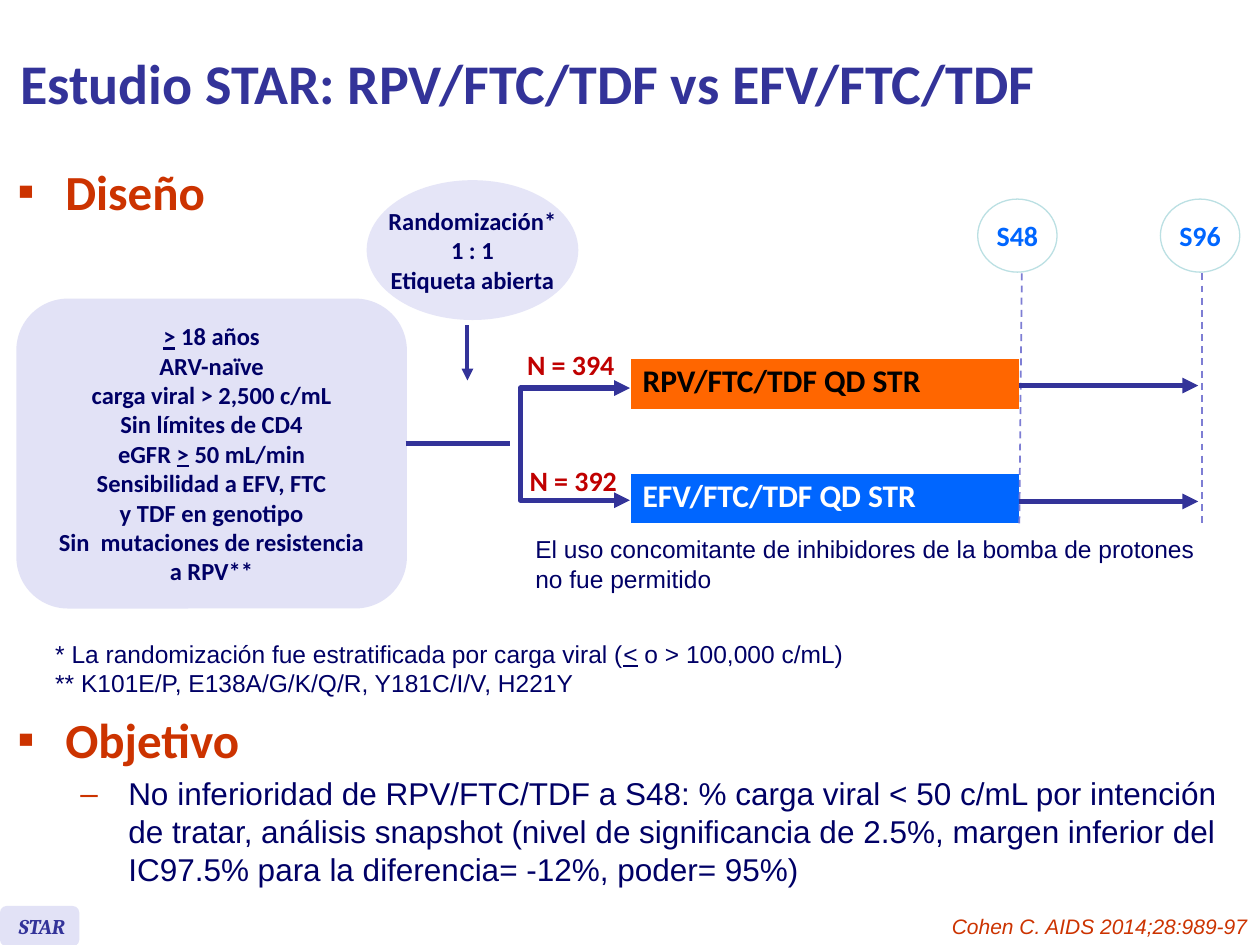
from lxml import etree
from pptx import Presentation
from pptx.dml.color import RGBColor
from pptx.enum import dml, shapes, text
from pptx.oxml.ns import qn
from pptx.util import Inches, Pt

NAVY = RGBColor(0x00, 0x00, 0x66)
INDIGO = RGBColor(0x33, 0x33, 0x99)
RUST = RGBColor(0xCC, 0x33, 0x00)
RED = RGBColor(0xC0, 0x00, 0x00)
ORANGE = RGBColor(0xFF, 0x66, 0x00)
BLUE = RGBColor(0x00, 0x66, 0xFF)
LILAC = RGBColor(0xE2, 0xE2, 0xF6)
PALE_LILAC = RGBColor(0xE5, 0xE5, 0xF7)
VIOLET = RGBColor(0x7E, 0x7E, 0xD4)
AQUA = RGBColor(0xBB, 0xE0, 0xE3)
BLACK = RGBColor(0, 0, 0)
WHITE = RGBColor(0xFF, 0xFF, 0xFF)

LEFT, CENTER, RIGHT = text.PP_ALIGN.LEFT, text.PP_ALIGN.CENTER, text.PP_ALIGN.RIGHT
MIDDLE = text.MSO_ANCHOR.MIDDLE
OVAL, ROUNDED = shapes.MSO_SHAPE.OVAL, shapes.MSO_SHAPE.ROUNDED_RECTANGLE

prs = Presentation()
prs.slide_width, prs.slide_height = Inches(10), Inches(7.5)
s = prs.slides.add_slide(prs.slide_layouts[5])


def write(tf, lines, size, font, color, bold=False, italic=False, align=LEFT, wrap=True):
    """Fill a text frame, one paragraph a line; text between underscores is underlined."""
    tf.word_wrap = wrap
    for i, line in enumerate(lines):
        p = tf.paragraphs[0] if i == 0 else tf.add_paragraph()
        p.alignment = align
        for j, part in enumerate(line.split("_")):
            if not part:
                continue
            r = p.add_run()
            r.text = part
            r.font.size, r.font.name = Pt(size), font
            r.font.bold, r.font.italic = bold, italic
            r.font.color.rgb = color
            if j % 2:
                r.font.underline = True


def style_line(sp, color, width, ends=()):
    """Set the stroke of a connector or outline, with triangles at the given ends."""
    sp.line.color.rgb = color
    sp.line.width = Pt(width)
    for end in ends:
        etree.SubElement(sp.line._get_or_add_ln(), qn("a:" + end), type="triangle")
    if sp._element.spPr.find(qn("a:effectLst")) is None:
        etree.SubElement(sp._element.spPr, qn("a:effectLst"))


# Title
title = s.shapes.title
title.left, title.top, title.width, title.height = map(Inches, (0.06, 0.05, 9.55, 1.21))
title.text_frame.vertical_anchor = MIDDLE
write(title.text_frame, ["Estudio STAR: RPV/FTC/TDF vs EFV/FTC/TDF"], 32, "Calibri", INDIGO, bold=True)
title.text_frame.auto_size = text.MSO_AUTO_SIZE.NONE

# Section headings and objective
goal = ("No inferioridad de RPV/FTC/TDF a S48: % carga viral < 50 c/mL por intención de tratar, "
        "análisis snapshot (nivel de significancia de 2.5%, margen inferior del IC97.5% para la "
        "diferencia= -12%, poder= 95%)")
for box, heading, detail in [
    ((0.04, 1.23, 1.98, 0.63), "Diseño", None),
    ((0.04, 5.58, 9.8, 1.58), "Objetivo", goal),
]:
    tf = s.shapes.add_textbox(*map(Inches, box)).text_frame
    write(tf, [heading], 28, "Calibri", RUST, bold=True)
    if detail:
        p = tf.add_paragraph()
        p.level = 1
        p.space_before = Pt(3.6)
        r = p.add_run()
        r.text = detail
        r.font.size, r.font.name = Pt(18), "Arial"
        r.font.color.rgb = NAVY
    for p, bullet, margin in zip(tf.paragraphs, "▪–", (0.38, 0.88)):
        pPr = p._p.get_or_add_pPr()
        pPr.set("marL", str(Inches(margin)))
        pPr.set("indent", str(Inches(-0.38)))
        bullet_color = etree.SubElement(pPr, qn("a:buClr"))
        etree.SubElement(bullet_color, qn("a:srgbClr"), val=str(RUST))
        etree.SubElement(pPr, qn("a:buFont"), typeface="Arial")
        etree.SubElement(pPr, qn("a:buChar"), char=bullet)

# Treatment arms
for top, height, arm, fill, color, spacing in [
    (2.84, 0.41, "RPV/FTC/TDF QD STR", ORANGE, BLACK, 0.8),
    (3.76, 0.4, "EFV/FTC/TDF QD STR", BLUE, WHITE, 0.7),
]:
    table = s.shapes.add_table(1, 1, Inches(5), Inches(top), Inches(3.09), Inches(height)).table
    table.first_row = table.horz_banding = False
    cell = table.cell(0, 0)
    cell.fill.solid()
    cell.fill.fore_color.rgb = fill
    cell.vertical_anchor = MIDDLE
    write(cell.text_frame, [arm], 18, "Calibri", color, bold=True)
    cell.text_frame.paragraphs[0].line_spacing = spacing

# Randomisation, inclusion criteria, visits and study tag
criteria = ["_>_ 18 años", "ARV-naïve", "carga viral > 2,500 c/mL", "Sin límites de CD4",
            "eGFR _>_ 50 mL/min", "Sensibilidad a EFV, FTC", "y TDF en genotipo",
            "Sin  mutaciones de resistencia", "a RPV**"]
randomisation = ["Randomización*", "1 : 1", "Etiqueta abierta"]
for kind, box, fill, outline, lines, size, color, wrap in [
    (OVAL, (2.91, 1.43, 1.68, 1.11), PALE_LILAC, None, randomisation, 14, NAVY, False),
    (ROUNDED, (0.13, 2.37, 3.1, 2.46), LILAC, None, criteria, 14, NAVY, True),
    (OVAL, (7.76, 1.58, 0.63, 0.58), WHITE, AQUA, ["S48"], 16, BLUE, False),
    (OVAL, (9.21, 1.58, 0.63, 0.58), WHITE, AQUA, ["S96"], 16, BLUE, False),
    (ROUNDED, (0, 7.19, 0.63, 0.32), LILAC, None, [], 12, INDIGO, True),
]:
    sp = s.shapes.add_shape(kind, *map(Inches, box))
    sp.shadow.inherit = False
    sp.fill.solid()
    sp.fill.fore_color.rgb = fill
    if outline:
        style_line(sp, outline, 0.75)
    else:
        sp.line.fill.background()
    sp.text_frame.vertical_anchor = MIDDLE
    write(sp.text_frame, lines, size, "Calibri", color, bold=True, align=CENTER, wrap=wrap)

# Straight lines, arrows and visit markers
for x1, y1, x2, y2, color, width, ends, dashed in [
    (3.71, 2.58, 3.71, 3.02, INDIGO, 2.25, ["tailEnd"], False),
    (3.22, 3.52, 4.05, 3.52, INDIGO, 3, [], False),
    (9.54, 2.17, 9.54, 4.19, VIOLET, 1, [], True),
    (8.11, 2.17, 8.09, 4.17, VIOLET, 1, [], True),
    (8.09, 3.06, 9.51, 3.06, INDIGO, 3, ["tailEnd"], False),
    (8.09, 3.98, 9.51, 3.98, INDIGO, 3, ["tailEnd"], False),
]:
    line = s.shapes.add_connector(shapes.MSO_CONNECTOR.STRAIGHT, *map(Inches, (x1, y1, x2, y2)))
    style_line(line, color, width, ends)
    if dashed:
        line.line.dash_style = dml.MSO_LINE.DASH

# Fork to both arms
fork = s.shapes.build_freeform(Inches(5), Inches(3.08))
fork.add_line_segments([(Inches(x), Inches(y)) for x, y in [(4.13, 3.08), (4.13, 3.97), (5, 3.97)]],
                       close=False)
sp = fork.convert_to_shape()
sp.shadow.inherit = False
sp.fill.background()
style_line(sp, INDIGO, 3, ["headEnd", "tailEnd"])

# Arm sizes, notes, citation and tag label
for box, lines, size, font, color, bold, italic, align, wrap in [
    ((4.08, 2.71, 0.9, 0.37), ["N = 394"], 16, "Calibri", RED, True, False, CENTER, False),
    ((4.1, 3.63, 0.9, 0.37), ["N = 392"], 16, "Calibri", RED, True, False, CENTER, False),
    ((4.15, 4.19, 5.51, 0.57),
     ["El uso concomitante de inhibidores de la bomba de protones", "no fue permitido"],
     14, "Arial", NAVY, False, False, LEFT, False),
    ((0.34, 5.02, 7.36, 0.73),
     ["* La randomización fue estratificada por carga viral (_<_ o > 100,000 c/mL)",
      "** K101E/P, E138A/G/K/Q/R, Y181C/I/V, H221Y"],
     14, "Arial", NAVY, False, False, LEFT, True),
    ((7, 7.2, 3, 0.3), ["Cohen C. AIDS 2014;28:989-97"], 12, "Arial", RUST, False, True, RIGHT, True),
    ((0.05, 7.2, 0.61, 0.3), ["STAR"], 12, "Cambria", INDIGO, True, True, LEFT, True),
]:
    tf = s.shapes.add_textbox(*map(Inches, box)).text_frame
    write(tf, lines, size, font, color, bold, italic, align, wrap)

prs.save("out.pptx")
